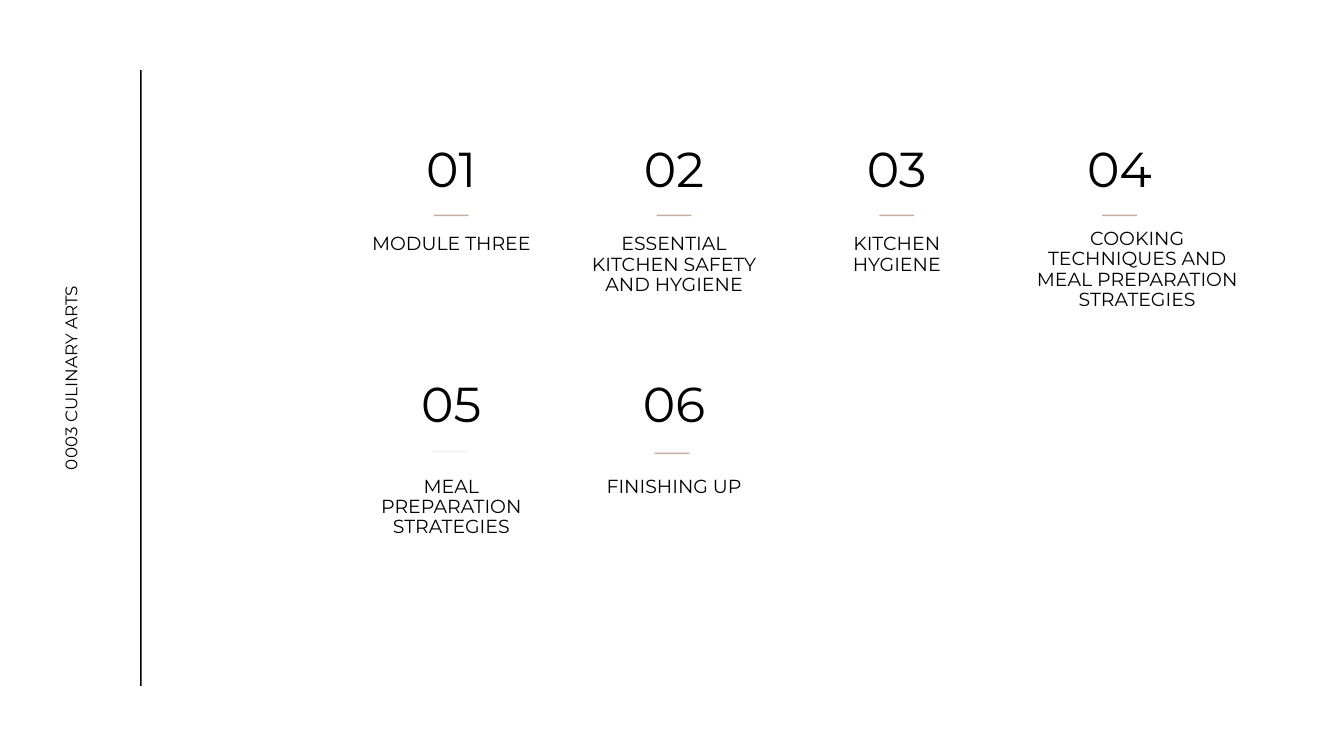
from pptx import Presentation
from pptx.dml.color import RGBColor
from pptx.enum.shapes import MSO_SHAPE as Shape
from pptx.enum.text import MSO_ANCHOR as Anchor, MSO_AUTO_SIZE as AutoSize, PP_ALIGN as Align
from pptx.util import Inches, Pt

COLORS = {"ink": "000000", "rose": "C7ACA1", "pale": "F2F2F2"}
FONT = "Montserrat"

deck = Presentation()
deck.slide_width, deck.slide_height = Inches(26.67), Inches(15)
page = deck.slides.add_slide(deck.slide_layouts[6])


def add_text(text, left, top, width, height, size, spacing=1.0, anchor=Anchor.TOP, rotation=0):
    box = page.shapes.add_textbox(Inches(left), Inches(top), Inches(width), Inches(height))
    box.rotation = rotation
    frame = box.text_frame
    frame.word_wrap = True
    frame.auto_size = AutoSize.SHAPE_TO_FIT_TEXT
    frame.vertical_anchor = anchor
    frame.margin_left = frame.margin_right = frame.margin_top = frame.margin_bottom = 0
    para = frame.paragraphs[0]
    para.alignment = Align.CENTER
    para.line_spacing = spacing
    span = para.add_run()
    span.text = text
    span.font.name = FONT
    span.font.size = Pt(size)
    span.font.color.rgb = RGBColor.from_string(COLORS["ink"])


def add_bar(left, top, width, height, color):
    bar = page.shapes.add_shape(Shape.RECTANGLE, Inches(left), Inches(top), Inches(width), Inches(height))
    bar.shadow.inherit = False
    bar.fill.solid()
    bar.fill.fore_color.rgb = RGBColor.from_string(COLORS[color])
    bar.line.fill.background()


add_bar(2.78, 1.39, 0.03, 12.22, "ink")

FIRST_LEFT, COLUMN_STEP, COLUMN_WIDTH, COLUMNS = 7.22, 4.42, 3.47, 4
NUMBER_TOPS = [2.74, 7.42]
LABEL_TOPS = [4.65, 9.46]
LINE_HEIGHT = 0.41
DASH_WIDTH = 0.69

topics = [
    {"label": "MODULE THREE", "lines": 1},
    {"label": "ESSENTIAL KITCHEN SAFETY AND HYGIENE", "lines": 3},
    {"label": "KITCHEN HYGIENE", "lines": 2},
    {"label": "COOKING TECHNIQUES AND MEAL PREPARATION STRATEGIES", "lines": 4.5,
     "label_left": 20.4, "label_top": 4.54, "label_width": 4.33},
    {"label": "MEAL PREPARATION STRATEGIES", "lines": 3,
     "dash_left": 8.58, "dash_top": 8.94, "dash_color": "pale"},
    {"label": "FINISHING UP", "lines": 1, "dash_left": 12.99, "dash_top": 8.98},
]

for index, topic in enumerate(topics):
    row, column = divmod(index, COLUMNS)
    left = FIRST_LEFT + column * COLUMN_STEP
    add_text(f"{index + 1:02d}", left, NUMBER_TOPS[row], COLUMN_WIDTH, 1.17, size=70)
    add_bar(topic.get("dash_left", left + (COLUMN_WIDTH - DASH_WIDTH) / 2),
            topic.get("dash_top", 4.26), DASH_WIDTH, 0.03, topic.get("dash_color", "rose"))
    add_text(topic["label"], topic.get("label_left", left), topic.get("label_top", LABEL_TOPS[row]),
             topic.get("label_width", COLUMN_WIDTH), topic["lines"] * LINE_HEIGHT, size=27, spacing=0.9)

add_text("0003 CULINARY ARTS", -4.71, 7.3, 12.22, 0.4, size=24, anchor=Anchor.MIDDLE, rotation=270)

deck.save("out.pptx")
